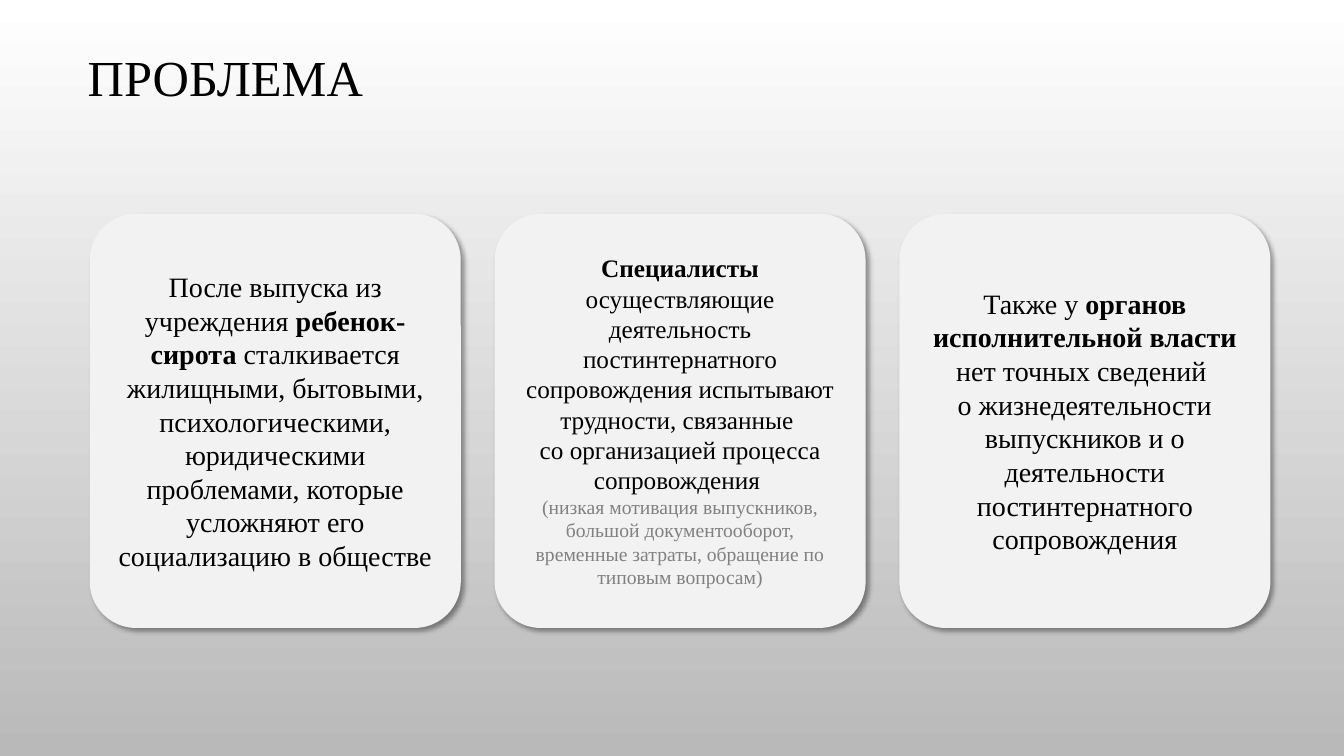
from lxml import etree
from pptx import Presentation
from pptx.dml.color import RGBColor
from pptx.enum.shapes import MSO_SHAPE
from pptx.enum.text import MSO_ANCHOR, MSO_AUTO_SIZE, PP_ALIGN
from pptx.oxml import parse_xml
from pptx.oxml.ns import nsdecls, qn
from pptx.util import Inches, Pt

ROUNDED = MSO_SHAPE.ROUNDED_RECTANGLE
MIDDLE, BOTTOM = MSO_ANCHOR.MIDDLE, MSO_ANCHOR.BOTTOM
LEFT, CENTER = PP_ALIGN.LEFT, PP_ALIGN.CENTER
NO_FIT = MSO_AUTO_SIZE.NONE

COLORS = {"text": "000000", "muted": "808080", "card": "F2F2F2",
          "top": "FFFFFF", "bottom": "B9B9B9"}
FONT = "Times New Roman"
CARD_LEFT, CARD_TOP, CARD_W, CARD_H, CARD_STEP = 0.89, 2.12, 3.68, 4.11, 4.015

CARDS = [
    (20, [("После выпуска из учреждения ", {}),
          ("ребенок-сирота", {"bold": True}),
          (" сталкивается жилищными, бытовыми, психологическими, юридическими "
           "проблемами, которые усложняют его социализацию в обществе", {})]),
    (18, [("Специалисты", {"bold": True}),
          (" осуществляющие деятельность постинтернатного сопровождения "
           "испытывают трудности, связанные \nсо организацией процесса "
           "сопровождения \n", {}),
          ("(низкая мотивация выпускников, большой документооборот, "
           "временные затраты, обращение по типовым вопросам)",
           {"size": Pt(14), "color": "muted"})]),
    (20, [("Также у ", {}),
          ("органов исполнительной власти ", {"bold": True}),
          ("нет точных сведений \nо жизнедеятельности выпускников и о "
           "деятельности постинтернатного сопровождения", {})]),
]


class ProblemSlide:
    """Holds the style and the current slide and draws its elements."""

    def __init__(self, prs):
        self.s = prs.slides.add_slide(prs.slide_layouts[5])

    def rgb(self, name):
        return RGBColor.from_string(COLORS[name])

    def background(self):
        fill = self.s.background.fill
        fill.gradient()
        fill.gradient_angle = 270
        for stop, name in zip(fill.gradient_stops, ("top", "bottom")):
            stop.color.rgb = self.rgb(name)

    def frame(self, sp, **values):
        tf = sp.text_frame
        for key, value in values.items():
            setattr(tf, key, value)
        return tf.paragraphs[0]

    def run(self, p, text, size, bold=False, color="text"):
        for i, line in enumerate(text.split("\n")):
            if i:
                p.add_line_break()
            if line:
                r = p.add_run()
                r.text = line
                values = {"name": FONT, "size": size, "bold": bold}
                for key, value in values.items():
                    setattr(r.font, key, value)
                r.font.color.rgb = self.rgb(color)

    def title(self, text):
        sp = self.s.shapes.title
        box = {"left": 0.77, "top": 0.19, "width": 11.23, "height": 0.93}
        for key, value in box.items():
            setattr(sp, key, Inches(value))
        p = self.frame(sp, vertical_anchor=BOTTOM, word_wrap=True,
                       auto_size=NO_FIT)
        p.alignment, p.line_spacing = LEFT, 0.9
        self.run(p, text, Pt(36))

    def shadow(self, sp):
        sp.shadow.inherit = False
        effects = sp._element.spPr.find(qn("a:effectLst"))
        outer = parse_xml(f'<a:outerShdw {nsdecls("a")} algn="tl" rotWithShape="0"/>')
        for key, value in {"blurRad": Pt(4), "dist": Pt(3), "dir": 45 * 60000}.items():
            outer.set(key, str(int(value)))
        color = etree.SubElement(outer, qn("a:srgbClr"), val=COLORS["text"])
        etree.SubElement(color, qn("a:alpha"), val="40000")
        effects.append(outer)

    def card(self, left, size, runs):
        sp = self.s.shapes.add_shape(ROUNDED, Inches(left), Inches(CARD_TOP),
                                     Inches(CARD_W), Inches(CARD_H))
        sp.adjustments[0] = 0.125
        sp.fill.solid()
        sp.fill.fore_color.rgb = self.rgb("card")
        sp.line.fill.background()
        self.shadow(sp)
        p = self.frame(sp, vertical_anchor=MIDDLE, word_wrap=True)
        p.alignment = CENTER
        for text, style in runs:
            self.run(p, text, **{"size": Pt(size), **style})


def main():
    prs = Presentation()
    prs.slide_width, prs.slide_height = Inches(13.33), Inches(7.5)
    slide = ProblemSlide(prs)
    slide.background()
    slide.title("ПРОБЛЕМА")
    for i, (size, runs) in enumerate(CARDS):
        slide.card(CARD_LEFT + i * CARD_STEP, size, runs)
    prs.save("out.pptx")


if __name__ == "__main__":
    main()
